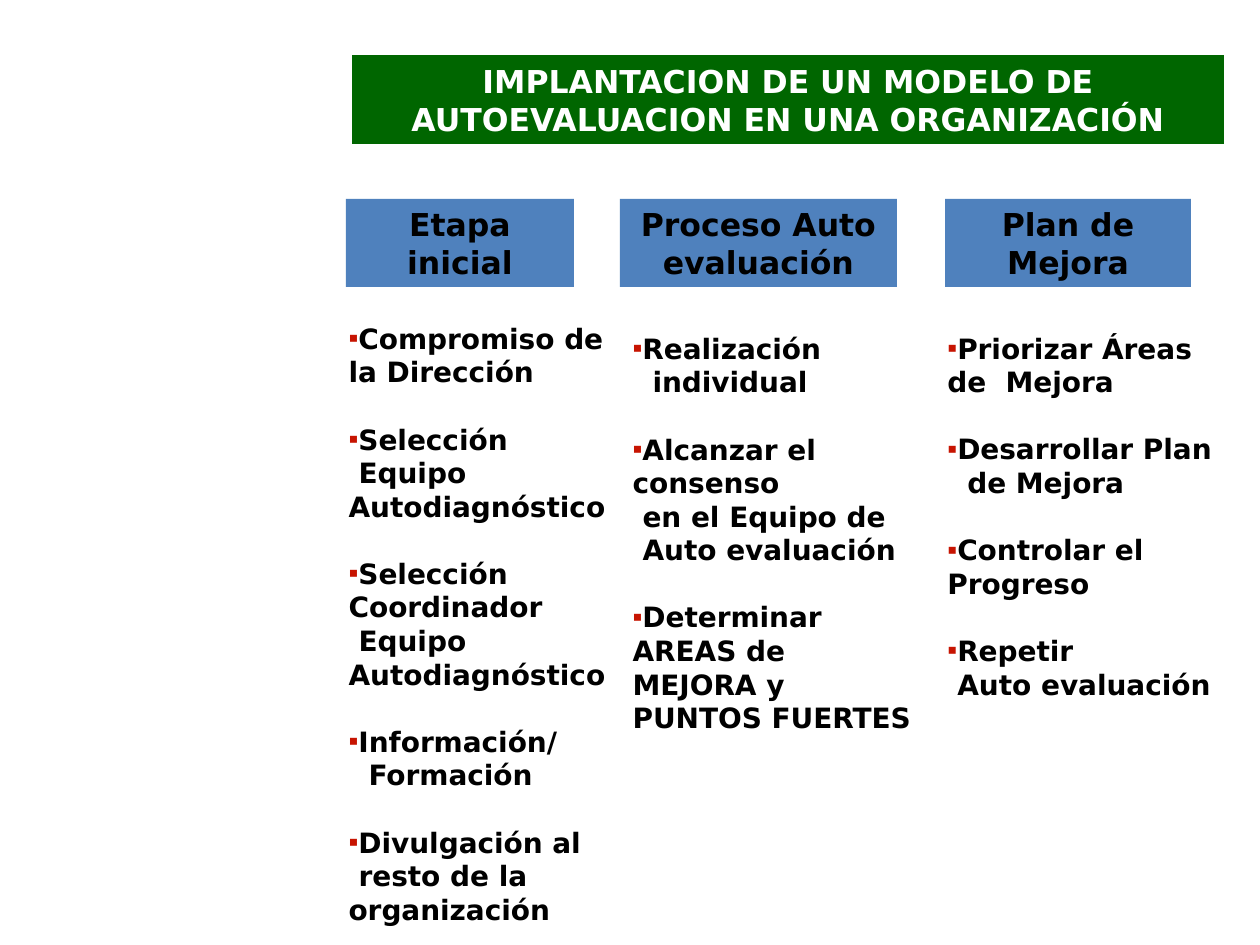
from lxml import etree
from pptx import Presentation
from pptx.dml.color import RGBColor
from pptx.enum.shapes import MSO_SHAPE
from pptx.enum.text import MSO_ANCHOR as Anchor, MSO_AUTO_SIZE as AutoSize, PP_ALIGN as Align
from pptx.oxml.ns import qn
from pptx.util import Emu, Pt

COLORS = {"title": "006600", "header": "4F81BD", "bullet": "C71401",
          "white": "FFFFFF", "black": "000000"}
FONT = "DejaVu Sans"
SPACE_WIDTH = 10
HEADER_TOP, HEADER_HEIGHT = 199, 88


def px(value):
    return Emu(round(value * 914400 / 126))


def format_text(shape, size, color, alignment, anchor):
    frame = shape.text_frame
    frame.word_wrap = True
    frame.auto_size = AutoSize.NONE
    frame.vertical_anchor = anchor
    for paragraph in frame.paragraphs:
        paragraph.alignment = alignment
        paragraph.space_before = Pt(0)
        paragraph.line_spacing = Pt(size * 1.2)
        for run in paragraph.runs:
            run.font.name = FONT
            run.font.size = Pt(size)
            run.font.bold = True
            run.font.color.rgb = RGBColor.from_string(COLORS[color])


presentation = Presentation()
presentation.slide_width, presentation.slide_height = px(1260), px(945)
slide = presentation.slides.add_slide(presentation.slide_layouts[3])

title, first_body, second_body = slide.placeholders
title.left, title.top, title.width, title.height = px(352), px(55), px(872), px(89)
title.fill.solid()
title.fill.fore_color.rgb = RGBColor.from_string(COLORS["title"])
title.text_frame.text = "IMPLANTACION DE UN MODELO DE AUTOEVALUACION EN UNA ORGANIZACIÓN"
format_text(title, 18, "white", Align.CENTER, Anchor.MIDDLE)

third_body = slide.shapes.add_textbox(0, 0, px(100), px(100))

# Each list line is paired with its first-line indent in spaces; None marks a bullet.
columns = [
    (first_body, "Etapa inicial", (346, 228), (336, 315, 284, 618), [
        ("Compromiso de la Dirección", None),
        ("Selección", None), ("Equipo", 1), ("Autodiagnóstico", 0),
        ("Selección Coordinador", None), ("Equipo Autodiagnóstico", 1),
        ("Información/", None), ("Formación", 2),
        ("Divulgación al", None), ("resto de la organización", 1)]),
    (second_body, "Proceso Auto evaluación", (620, 277), (620, 325, 315, 417), [
        ("Realización", None), ("individual", 2),
        ("Alcanzar el consenso", None), ("en el Equipo de", 1), ("Auto evaluación", 1),
        ("Determinar AREAS de  MEJORA y PUNTOS FUERTES", None)]),
    (third_body, "Plan de\nMejora", (945, 246), (935, 325, 293, 383), [
        ("Priorizar Áreas de  Mejora", None),
        ("Desarrollar Plan", None), ("de Mejora", 2),
        ("Controlar el Progreso", None),
        ("Repetir", None), ("Auto evaluación", 1)]),
]

for body, heading, (left, width), box, lines in columns:
    header = slide.shapes.add_shape(MSO_SHAPE.RECTANGLE, px(left), px(HEADER_TOP),
                                    px(width), px(HEADER_HEIGHT))
    header.shadow.inherit = False
    header.fill.solid()
    header.fill.fore_color.rgb = RGBColor.from_string(COLORS["header"])
    header.line.fill.background()
    header.text_frame.text = heading
    format_text(header, 18, "black", Align.CENTER, Anchor.MIDDLE)

    body.left, body.top, body.width, body.height = [px(value) for value in box]
    body.text_frame.text = "\n".join(text for text, indent in lines)
    format_text(body, 16, "black", Align.LEFT, Anchor.TOP)
    for number, (paragraph, (text, indent)) in enumerate(zip(body.text_frame.paragraphs, lines)):
        properties = paragraph._p.get_or_add_pPr()
        properties.set("marL", "0")
        properties.set("indent", str(px(SPACE_WIDTH * (indent or 0))))
        if indent is None:
            bullet_color = etree.SubElement(properties, qn("a:buClr"))
            etree.SubElement(bullet_color, qn("a:srgbClr"), val=COLORS["bullet"])
            etree.SubElement(properties, qn("a:buFont"), typeface="Arial")
            etree.SubElement(properties, qn("a:buChar"), char="▪")
            if number:
                paragraph.space_before = Pt(19.2)
        else:
            etree.SubElement(properties, qn("a:buNone"))

presentation.save("out.pptx")
